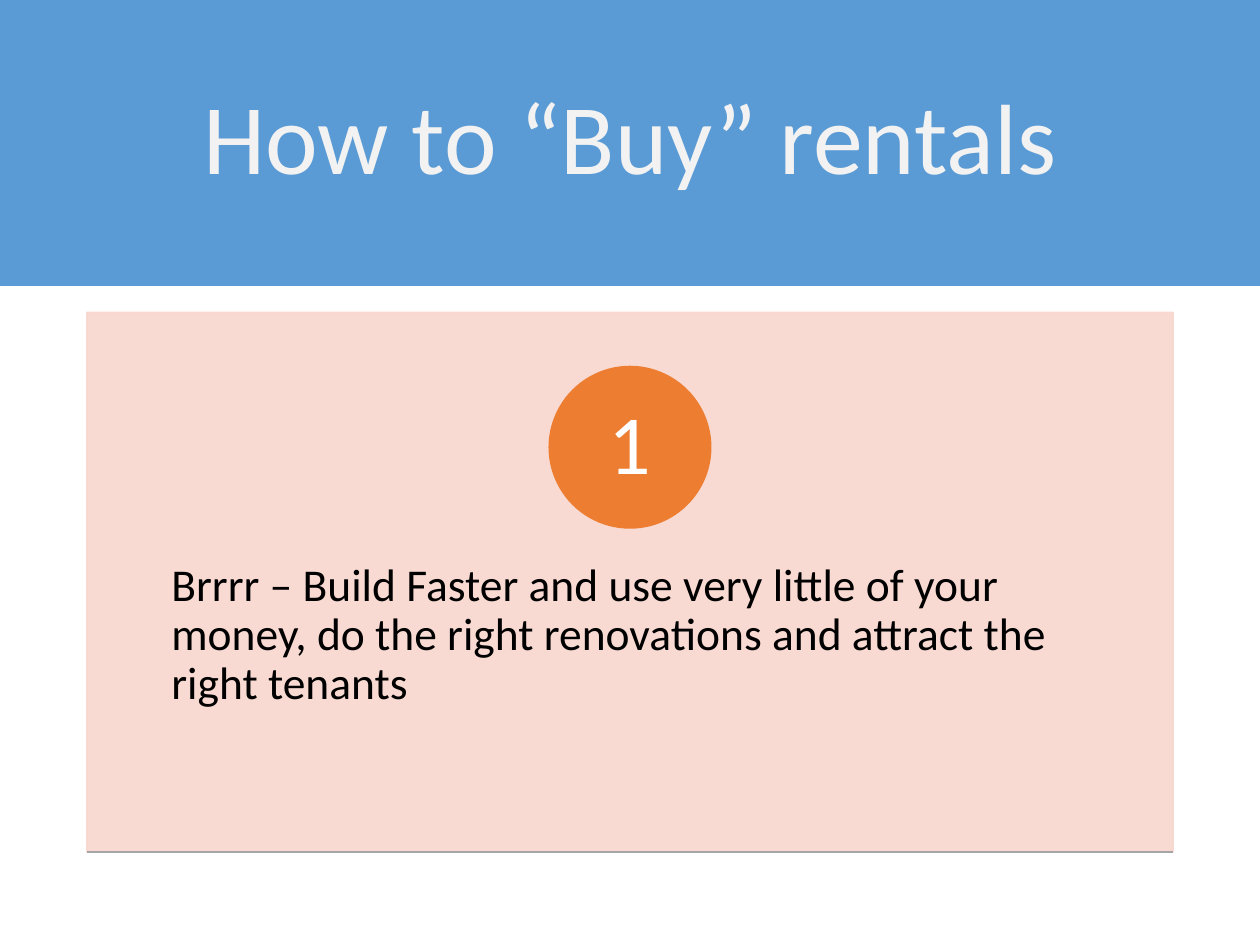
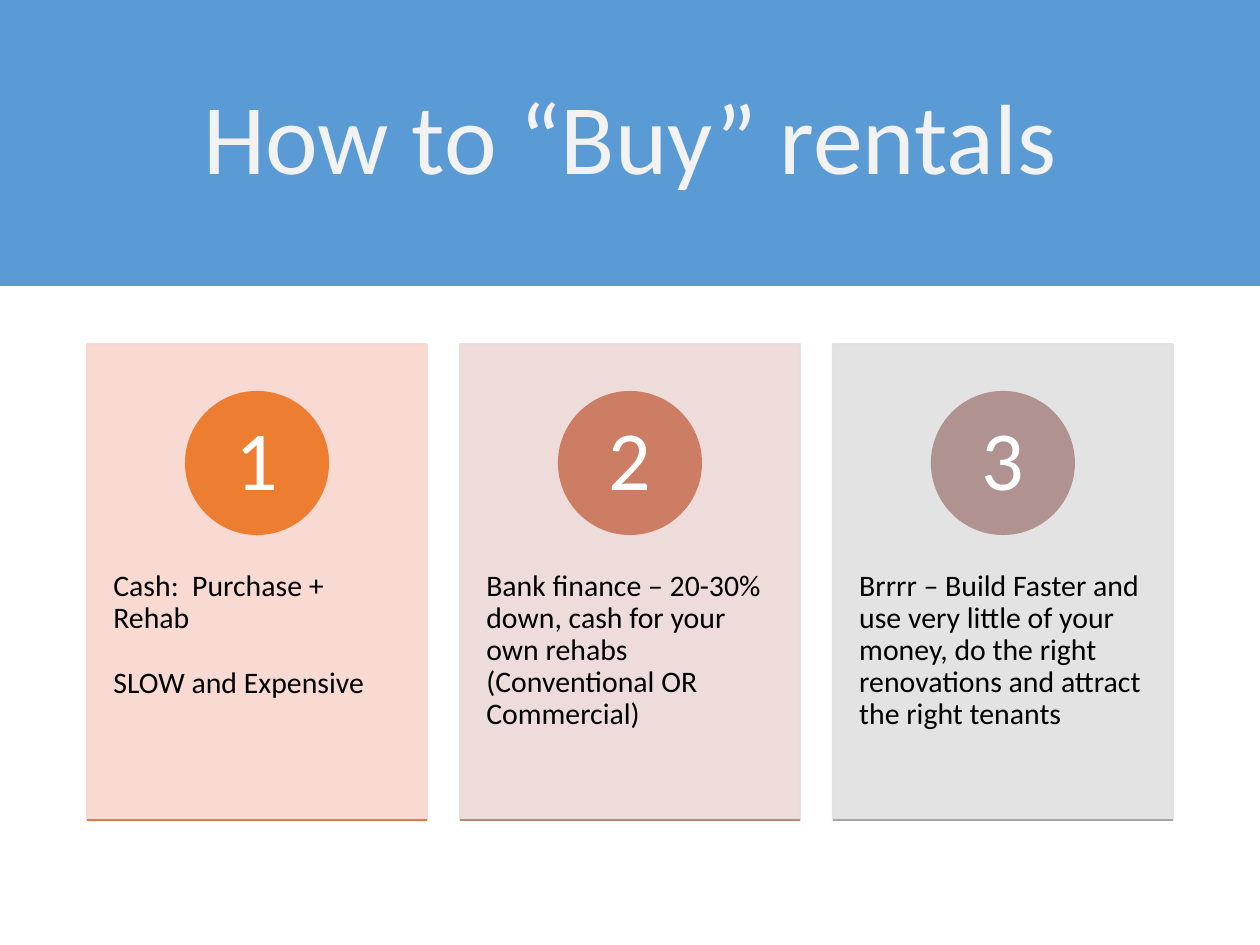
import pptx
import pptx.util
import pptx.dml.color
import pptx.enum.shapes
import pptx.enum.text
import pptx.oxml.ns
import lxml.etree

Inches = pptx.util.Inches
Pt = pptx.util.Pt
Color = pptx.dml.color.RGBColor
Kind = pptx.enum.shapes.MSO_SHAPE
Align = pptx.enum.text.PP_ALIGN
Anchor = pptx.enum.text.MSO_ANCHOR
qn = pptx.oxml.ns.qn

FONT = "Calibri"
BLUE = Color(0x5B, 0x9B, 0xD5)
PALE = Color(0xF2, 0xF2, 0xF2)
WHITE = Color(0xFF, 0xFF, 0xFF)
BLACK = Color(0x00, 0x00, 0x00)
ORANGE = Color(0xED, 0x7D, 0x31)
RUST = Color(0xDC, 0x7A, 0x4B)
PEACH = Color(0xF8, 0xD7, 0xCE)
CORAL = Color(0xCC, 0x7D, 0x64)
CLAY = Color(0xBD, 0x86, 0x7B)
ROSE = Color(0xED, 0xD9, 0xD7)
MAUVE = Color(0xB0, 0x93, 0x91)
GRAY = Color(0xA5, 0xA5, 0xA5)
SILVER = Color(0xE1, 0xE1, 0xE1)

EDGE = 0.69
SPAN = 8.62
TITLE = "How to “Buy” rentals"
BRRRR = ("Brrrr – Build Faster and use very little of your money, "
         "do the right renovations and attract the right tenants")


def write(frame, texts, size, color, align, anchor, pad=(0.1, 0.05), gap=0):
    """Fill a text frame with one paragraph per text, set apart by gap points."""
    frame.word_wrap = True
    frame.vertical_anchor = anchor
    frame.margin_left = frame.margin_right = Inches(pad[0])
    frame.margin_top = frame.margin_bottom = Inches(pad[1])
    for i, text in enumerate(texts):
        para = frame.paragraphs[0] if i == 0 else frame.add_paragraph()
        para.alignment = align
        para.line_spacing = 0.9
        if i:
            para.space_before = Pt(gap)
        run = para.add_run()
        run.text = text
        run.font.name = FONT
        run.font.size = Pt(size)
        run.font.color.rgb = color


def shape(slide, kind, box, color, edge=True):
    """Draw a flat preset shape in one colour."""
    item = slide.shapes.add_shape(kind, *map(Inches, box))
    item.shadow.inherit = False
    item.fill.solid()
    item.fill.fore_color.rgb = color
    if edge:
        item.line.color.rgb = color
        item.line.width = Pt(1)
    else:
        item.line.fill.background()
    return item


def fade(item, percent):
    """Make the fill and line of a shape partly transparent."""
    for color in item.element.spPr.iter(qn("a:srgbClr")):
        alpha = lxml.etree.SubElement(color, qn("a:alpha"))
        alpha.set("val", str(percent * 1000))


def rule(slide, left, top, width, color):
    """Draw a thin horizontal line."""
    line = slide.shapes.add_connector(
        pptx.enum.shapes.MSO_CONNECTOR.STRAIGHT,
        Inches(left), Inches(top), Inches(left + width), Inches(top))
    line.line.color.rgb = color
    line.line.width = Pt(1)
    lxml.etree.SubElement(line.element.spPr, qn("a:effectLst"))


def label(slide, box, *args, **more):
    """Place a text box."""
    item = slide.shapes.add_textbox(*map(Inches, box))
    write(item.text_frame, *args, **more)


def start(deck):
    """Add a slide with the blue title band."""
    slide = deck.slides.add_slide(deck.slide_layouts[6])
    shape(slide, Kind.RECTANGLE, (0, -0.01, 10, 2.28), BLUE, edge=False)
    label(slide, (EDGE, 0.4, SPAN, 1.45), [TITLE], 57, PALE,
          Align.CENTER, Anchor.MIDDLE)
    return slide


def card(slide, left, width, top, base, disc, body, size, inset, mark, texts, hues):
    """Draw a tinted card with a numbered disc, body text and a base line."""
    tint, fill, foot = hues
    disc_top, disc_size = disc
    fade(shape(slide, Kind.RECTANGLE, (left, top, width, base - top), tint), 90)
    label(slide, (left, body, width, base - body - 0.08), texts, size, BLACK,
          Align.LEFT, Anchor.TOP, pad=(inset, 0.36), gap=size * 1.09)
    side = left + (width - disc_size) / 2
    badge = shape(slide, Kind.OVAL, (side, disc_top, disc_size, disc_size), fill)
    write(badge.text_frame, [mark], 48, WHITE, Align.CENTER, Anchor.MIDDLE,
          pad=(0, 0))
    rule(slide, left, base, width, foot)


def main():
    """Build the two slides and save them."""
    deck = pptx.Presentation()
    deck.slide_width = Inches(10)
    deck.slide_height = Inches(7.5)

    card(start(deck), EDGE, SPAN, 2.48, 6.76, (2.91, 1.28), 4.1, 26, 0.67,
         "1", [BRRRR], (PEACH, ORANGE, GRAY))

    ways = [
        (["Cash:  Purchase + Rehab", "SLOW and Expensive"],
         (PEACH, ORANGE, RUST)),
        (["Bank finance – 20-30% down, cash for your own rehabs "
          "(Conventional OR Commercial)"], (ROSE, CORAL, CLAY)),
        ([BRRRR], (SILVER, MAUVE, GRAY)),
    ]
    slide = start(deck)
    width = 2.7
    step = (SPAN - width) / (len(ways) - 1)
    for i, (texts, hues) in enumerate(ways):
        card(slide, EDGE + i * step, width, 2.73, 6.51, (3.11, 1.13), 4.17,
             17, 0.21, str(i + 1), texts, hues)

    deck.save("out.pptx")


if __name__ == "__main__":
    main()
